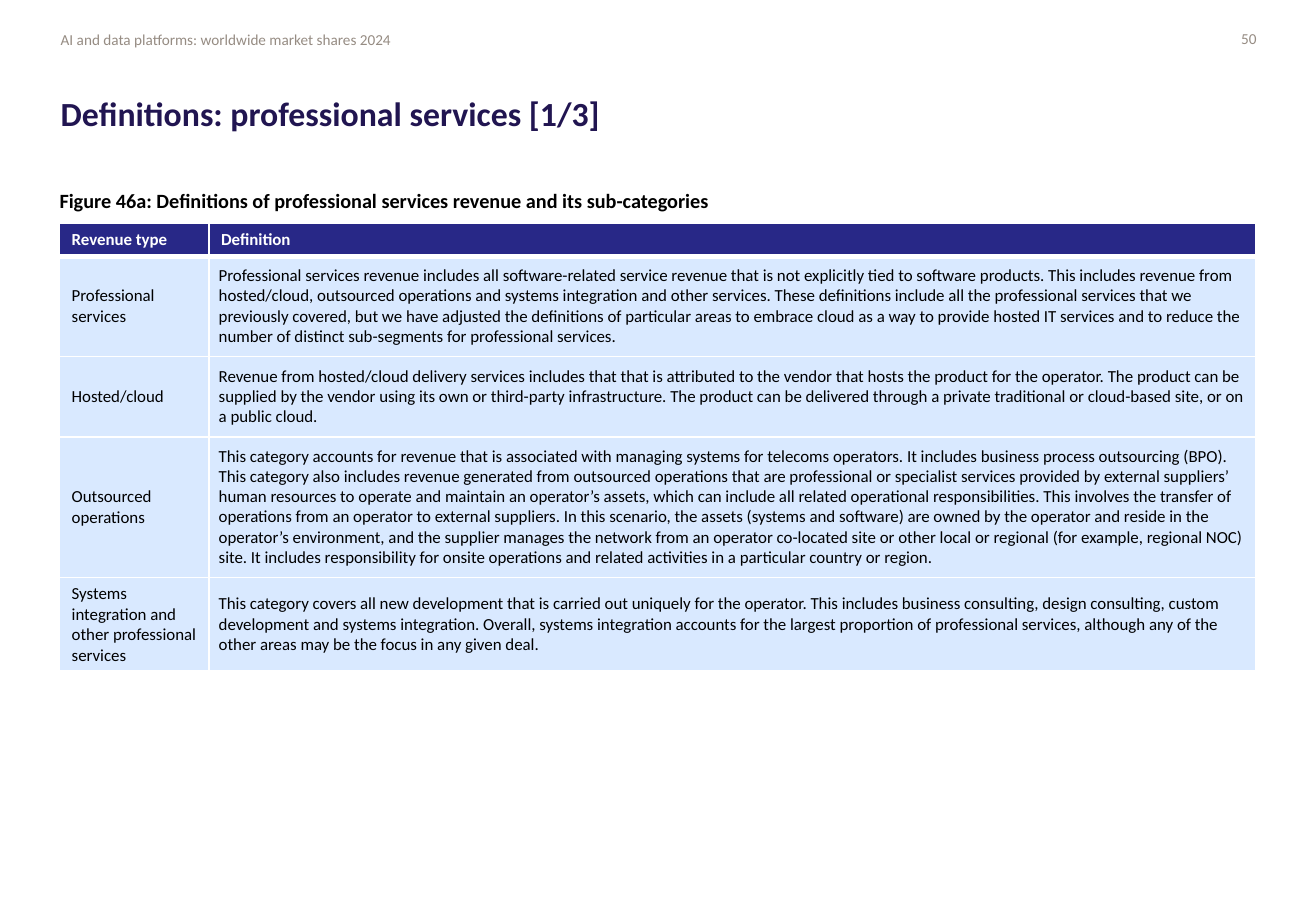
import pptx
import pptx.util
import pptx.dml.color
import pptx.enum.text
import pptx.oxml.ns
from lxml import etree

Inches = pptx.util.Inches
Pt = pptx.util.Pt
RGB = pptx.dml.color.RGBColor.from_string
ALIGN = pptx.enum.text.PP_ALIGN
ANCHOR = pptx.enum.text.MSO_ANCHOR

THEME = {
    "font": "Calibri",
    "color": {"gray": "968C83", "navy": "211551", "head": "282887",
              "pale": "D9E9FF", "white": "FFFFFF", "black": "000000"},
    "size": {"small": 9, "cell": 10, "label": 12, "title": 20},
}

COLS = [1.23, 8.61]
ROWS = [0.27, 0.81, 0.66, 1.16, 0.77]
TABLE = [
    ("Revenue type", "Definition"),
    ("Professional services",
     "Professional services revenue includes all software-related service revenue that is not "
     "explicitly tied to software products. This includes revenue from hosted/cloud, outsourced "
     "operations and systems integration and other services. These definitions include all the "
     "professional services that we previously covered, but we have adjusted the definitions of "
     "particular areas to embrace cloud as a way to provide hosted IT services and to reduce the "
     "number of distinct sub-segments for professional services."),
    ("Hosted/cloud",
     "Revenue from hosted/cloud delivery services includes that that is attributed to the vendor "
     "that hosts the product for the operator. The product can be supplied by the vendor using its "
     "own or third-party infrastructure. The product can be delivered through a private traditional "
     "or cloud-based site, or on a public cloud."),
    ("Outsourced operations", " ".join([
        "This category accounts for revenue that is associated with managing systems for telecoms "
        "operators. It includes business process outsourcing (BPO).",
        "This category also includes revenue generated from outsourced operations that are "
        "professional or specialist services provided by external suppliers’ human resources to "
        "operate and maintain an operator’s assets, which can include all related operational "
        "responsibilities.",
        "This involves the transfer of operations from an operator to external suppliers.",
        "In this scenario, the assets (systems and software) are owned by the operator and reside "
        "in the operator’s environment, and the supplier manages the network from an operator "
        "co-located site or other local or regional (for example, regional NOC) site.",
        "It includes responsibility for onsite operations and related activities in a particular "
        "country or region.",
    ])),
    ("Systems integration and other professional services",
     "This category covers all new development that is carried out uniquely for the operator. This "
     "includes business consulting, design consulting, custom development and systems integration. "
     "Overall, systems integration accounts for the largest proportion of professional services, "
     "although any of the other areas may be the focus in any given deal."),
]


def apply(target, values):
    for name, value in values.items():
        setattr(target, name, value)


def write(frame, text, size, color, bold=False, **layout):
    para = frame.paragraphs[0]
    apply(para, layout)
    run = para.add_run()
    run.text = text
    apply(run.font, {"name": THEME["font"], "size": Pt(THEME["size"][size]), "bold": bold})
    run.font.color.rgb = RGB(THEME["color"][color])


def add_text(slide, place, text, size, color, anchor=ANCHOR.MIDDLE, **style):
    frame = slide.shapes.add_textbox(*map(Inches, place)).text_frame
    apply(frame, {"word_wrap": True, "vertical_anchor": anchor,
                  "margin_left": 0, "margin_right": 0,
                  "margin_top": Inches(0.05), "margin_bottom": Inches(0.05)})
    write(frame, text, size, color, **style)


def add_edges(cell, widths):
    props = cell._tc.get_or_add_tcPr()
    for side, width in widths.items():
        line = etree.SubElement(props, pptx.oxml.ns.qn(f"a:ln{side}"), w=str(Pt(width)))
        fill = etree.SubElement(line, pptx.oxml.ns.qn("a:solidFill"))
        etree.SubElement(fill, pptx.oxml.ns.qn("a:srgbClr"), val=THEME["color"]["white"])


def fill_cell(cell, text, row, col):
    head = row == 0
    cell.vertical_anchor = ANCHOR.MIDDLE
    layout = {}
    if col and not head:
        sides = ("left", "right", "top", "bottom")
        apply(cell, {f"margin_{side}": Inches(0.08) for side in sides})
        layout = {"line_spacing": Pt(12), "space_after": Pt(2)}
    add_edges(cell, {"L": 1, "R": 1, "T": 3 if row == 1 else 1, "B": 3 if head else 1})
    cell.fill.solid()
    cell.fill.fore_color.rgb = RGB(THEME["color"]["head" if head else "pale"])
    write(cell.text_frame, text, "cell", "white" if head else "black", head, **layout)


def add_grid(slide, left, top):
    place = map(Inches, (left, top, sum(COLS), sum(ROWS)))
    table = slide.shapes.add_table(len(ROWS), len(COLS), *place).table
    table.horz_banding = False
    for col, width in zip(table.columns, COLS):
        col.width = Inches(width)
    for row, height in zip(table.rows, ROWS):
        row.height = Inches(height)
    for row, texts in enumerate(TABLE):
        for col, text in enumerate(texts):
            fill_cell(table.cell(row, col), text, row, col)


def main():
    deck = pptx.Presentation()
    apply(deck, {"slide_width": Inches(10.83), "slide_height": Inches(7.5)})
    slide = deck.slides.add_slide(deck.slide_layouts[6])
    add_text(slide, (0.5, 0.16, 3.23, 0.31),
             "AI and data platforms: worldwide market shares 2024",
             "small", "gray", line_spacing=1.1, space_after=Pt(8))
    add_text(slide, (9.59, 0.16, 0.75, 0.31), "50", "small", "gray", alignment=ALIGN.RIGHT)
    add_text(slide, (0.5, 0.51, 9.84, 0.83), "Definitions: professional services [1/3]",
             "title", "navy", bold=True, line_spacing=Pt(25))
    add_text(slide, (0.49, 1.5, 9.84, 0.28),
             "Figure 46a: Definitions of professional services revenue and its sub-categories",
             "label", "black", ANCHOR.TOP, bold=True, space_after=Pt(8))
    add_grid(slide, 0.49, 1.84)
    deck.save("out.pptx")


if __name__ == "__main__":
    main()
